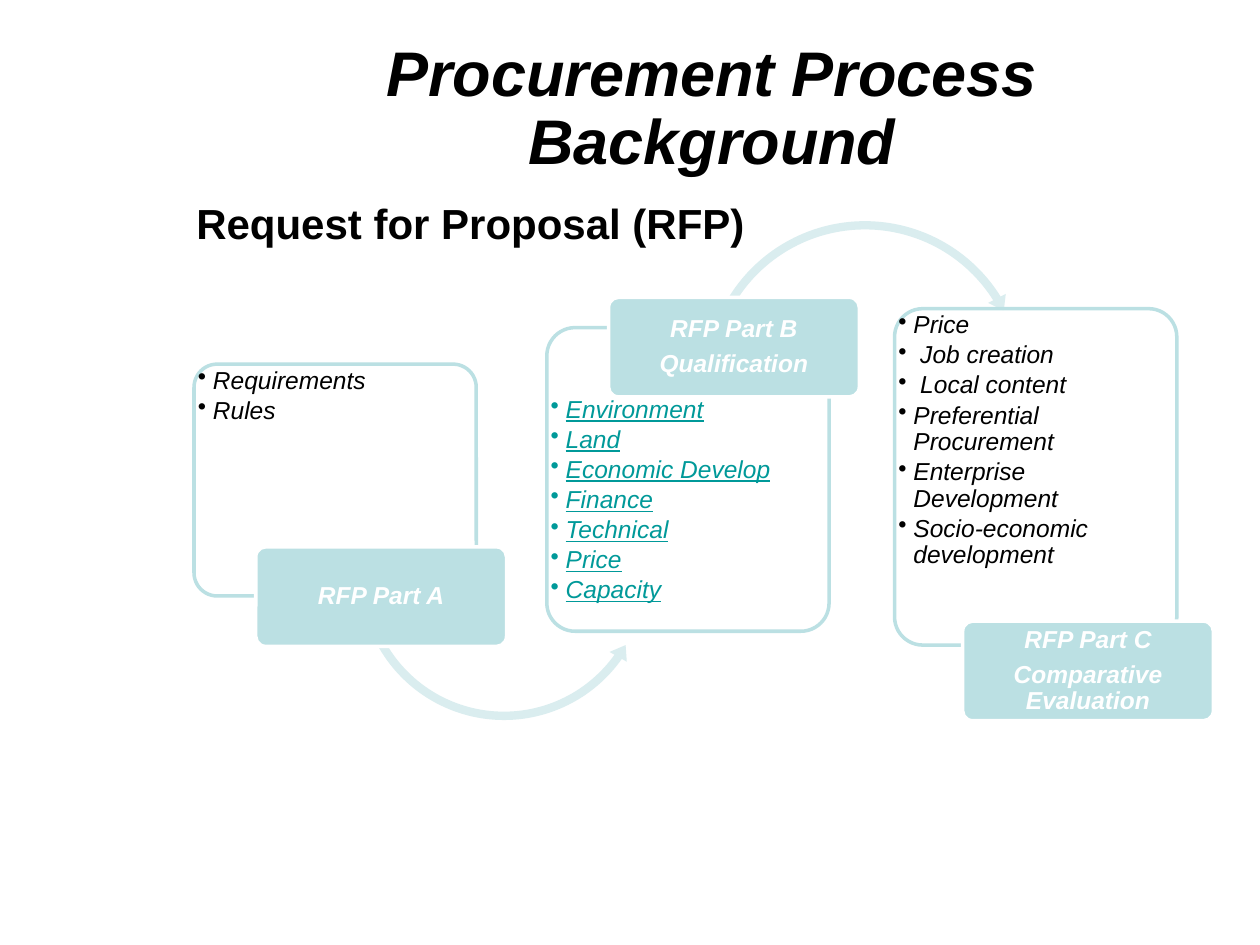
from lxml import etree
from pptx import Presentation
from pptx.dml.color import RGBColor
from pptx.enum import shapes, text
from pptx.oxml import ns
from pptx.util import Inches, Pt

BLACK, WHITE, TEAL, LINK, ARROW = "000000", "FFFFFF", "BBE0E3", "009999", "DAEDEF"
SHAPE = shapes.MSO_SHAPE
PANEL_W, LABEL_W, LABEL_H = 2.24, 1.99, 0.79


def rgb(color):
    """Turn a hex string into a colour."""
    return RGBColor.from_string(color)


def add_bullet(p):
    """Give a paragraph a hanging round bullet."""
    pPr = p._p.get_or_add_pPr()
    pPr.set("marL", str(Inches(0.12)))
    pPr.set("indent", str(-Inches(0.12)))
    etree.SubElement(pPr, ns.qn("a:buChar")).set("char", "•")


def write(sp, lines, size=14, color=BLACK, bold=False, italic=False, underline=False,
          align=text.PP_ALIGN.LEFT, anchor=text.MSO_ANCHOR.TOP, spacing=None,
          after=0, bullet=False, inset=(0.1, 0.05)):
    """Fill a shape's text frame with one paragraph per line."""
    tf = sp.text_frame
    tf.word_wrap = True
    tf.vertical_anchor = anchor
    tf.margin_left = tf.margin_right = Inches(inset[0])
    tf.margin_top = tf.margin_bottom = Inches(inset[1])
    for i, line in enumerate(lines):
        p = tf.add_paragraph() if i else tf.paragraphs[0]
        p.alignment = align
        p.line_spacing = spacing
        p.space_after = Pt(after)
        if bullet:
            add_bullet(p)
        r = p.add_run()
        r.text = line
        font = r.font
        font.name, font.size = "Arial", Pt(size)
        font.bold, font.italic, font.underline = bold, italic, underline
        font.color.rgb = rgb(color)


def add_text(s, lines, left, top, width, height, **fmt):
    """Add a text box."""
    write(s.shapes.add_textbox(*map(Inches, (left, top, width, height))), lines, **fmt)


def add_shape(s, kind, left, top, width, height, adjustments, fill, line=None, alpha=None):
    """Add a preset shape with its fill, outline and adjustments."""
    sp = s.shapes.add_shape(kind, *map(Inches, (left, top, width, height)))
    sp.shadow.inherit = False
    for i, value in enumerate(adjustments):
        sp.adjustments[i] = value
    sp.fill.solid()
    sp.fill.fore_color.rgb = rgb(fill)
    if alpha:
        clr = sp._element.spPr.find(ns.qn("a:solidFill"))[0]
        etree.SubElement(clr, ns.qn("a:alpha")).set("val", str(alpha * 1000))
    if line:
        sp.line.color.rgb = rgb(line)
        sp.line.width = Pt(2)
    else:
        sp.line.fill.background()
    return sp


def add_panel(s, items, left, top, height, list_top, list_height, color=BLACK, underline=False):
    """Add an outlined panel with its bulleted list."""
    add_shape(s, SHAPE.ROUNDED_RECTANGLE, left, top, PANEL_W, height, [0.1], WHITE, TEAL, 90)
    add_text(s, items, left, list_top, PANEL_W, list_height, color=color, italic=True,
             underline=underline, spacing=0.9, after=2.1, bullet=True, inset=(0.03, 0.03))


def add_label(s, lines, left, top):
    """Add the filled label of a panel."""
    sp = add_shape(s, SHAPE.ROUNDED_RECTANGLE, left, top, LABEL_W, LABEL_H, [0.1], TEAL, WHITE)
    write(sp, lines, color=WHITE, bold=True, italic=True, align=text.PP_ALIGN.CENTER,
          anchor=text.MSO_ANCHOR.MIDDLE, spacing=0.9, after=4.9, inset=(0.03, 0.02))


def add_arrow(s, kind, left, top, size, adjustments):
    """Add a curved arrow that leads to the next panel."""
    add_shape(s, kind, left, top, size, size, adjustments, ARROW)


def main():
    """Build the slide and save it."""
    prs = Presentation()
    prs.slide_width, prs.slide_height = Inches(10), Inches(7.5)
    s = prs.slides.add_slide(prs.slide_layouts[6])

    add_text(s, ["Request for Proposal (RFP)"], 1.46, 1.55, 8.04, 0.47, size=24, bold=True,
             anchor=text.MSO_ANCHOR.BOTTOM)

    add_panel(s, ["Requirements", "Rules"], 1.54, 2.89, 1.84, 2.89, 1.45)
    add_arrow(s, SHAPE.LEFT_CIRCULAR_ARROW, 2.81, 3.38, 2.38,
              [0.028, 3.427, 21.218, 90.281, 0.033])
    add_label(s, ["RFP Part A"], 2.03, 4.34)

    add_panel(s, ["Environment", "Land", "Economic Develop", "Finance", "Technical", "Price",
                  "Capacity"], 4.34, 2.6, 2.41, 3.12, 1.9, color=LINK, underline=True)
    add_arrow(s, SHAPE.CIRCULAR_ARROW, 5.55, 1.71, 2.63,
              [0.025, 3.084, 196.77, 127.365, 0.03])
    add_label(s, ["RFP Part B", "Qualification"], 4.83, 2.36)

    add_panel(s, ["Price", " Job creation", " Local content", "Preferential Procurement",
                  "Enterprise Development", "Socio-economic development"],
              7.1, 2.45, 2.67, 2.45, 2.09)
    add_label(s, ["RFP Part C", "Comparative Evaluation"], 7.64, 4.93)

    add_text(s, ["Procurement Process Background"], 1.46, 0.25, 8.38, 1.25, size=36, bold=True,
             italic=True, align=text.PP_ALIGN.CENTER, anchor=text.MSO_ANCHOR.MIDDLE, spacing=0.9)
    prs.save("out.pptx")


if __name__ == "__main__":
    main()
